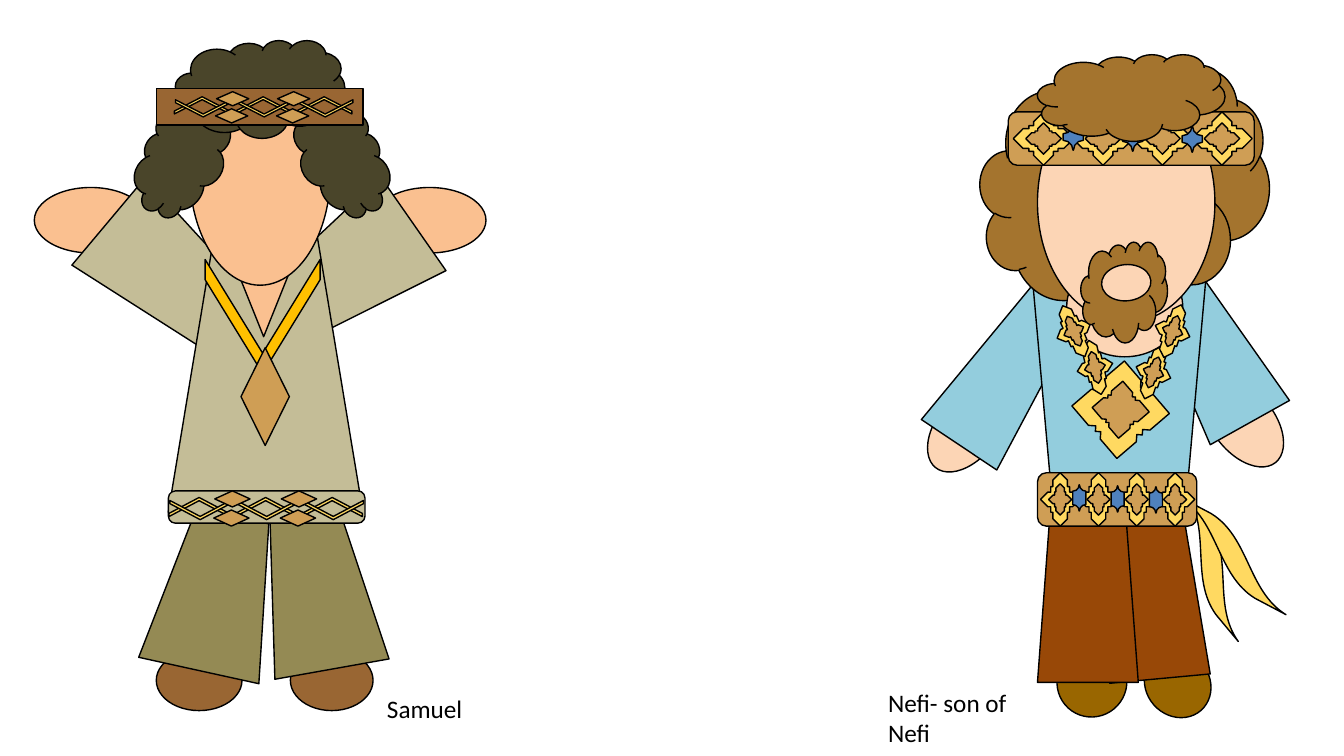
"""Draw two paper-doll figures, Samuel and Nefi, with their captions."""
from pptx import Presentation
from pptx import util as u
from pptx.dml import color
from pptx.enum import shapes, text

RGB = color.RGBColor
KIND = shapes.MSO_SHAPE
BLACK = RGB(0, 0, 0)
BROWN = RGB(0x99, 0x66, 0x33)
TAN = RGB(0xFA, 0xC0, 0x90)
LINEN = RGB(0xC4, 0xBD, 0x97)
OLIVE = RGB(0x94, 0x8A, 0x54)
AMBER = RGB(0xFF, 0xC0, 0x00)
DARK = RGB(0x4A, 0x45, 0x2A)
GOLD = RGB(0xFF, 0xD9, 0x61)
BRONZE = RGB(0xCF, 0x9E, 0x55)
SHOE = RGB(0x99, 0x66, 0x00)
RUST = RGB(0x98, 0x48, 0x07)
PEACH = RGB(0xFC, 0xD5, 0xB5)
SKY = RGB(0x93, 0xCD, 0xDD)
HAIR = RGB(0xA4, 0x74, 0x2E)
BLUE = RGB(0x4F, 0x81, 0xBD)


def put(doll, kind, fill, box, turn=0, adj=()):
    """Add one outlined shape to a doll."""
    part = doll.shapes.add_shape(kind, *map(u.Inches, box))
    part.shadow.inherit = False
    part.fill.solid()
    part.fill.fore_color.rgb = fill
    part.line.color.rgb = BLACK
    part.line.width = u.Pt(1)
    part.rotation = turn
    for i, value in enumerate(adj):
        part.adjustments[i] = value
    return part


def braid(doll, left, top, step, link, gem):
    """Add three crossed chevron pairs with four diamonds between them."""
    for i in range(3):
        for shift, turn in ((0, 270), (1, 90)):
            box = (left + i * step + shift * 0.01, top + shift * 0.03, *link)
            put(doll, KIND.CHEVRON, GOLD, box, turn, [0.833])
    for row in range(2):
        for i in range(2):
            x = left + (link[0] + step - gem[0]) / 2 + i * step - row * 0.01
            y = top + 0.14 + row * (gem[1] + 0.03)
            put(doll, KIND.DIAMOND, BRONZE, (x, y, *gem))


def star(doll, left, top, wide, high, turn=0):
    """Add a gold star with a smaller bronze star at its centre."""
    for fill, scale in ((GOLD, 1), (BRONZE, 0.585)):
        gap = (1 - scale) / 2
        box = (left + wide * gap, top + high * gap, wide * scale, high * scale)
        put(doll, KIND.QUAD_ARROW_CALLOUT, fill, box, turn,
            [0.37, 0.185, 0.185, 0.481])


def jewels(doll, band, left, step, wide, gem):
    """Add a bronze band with four stars and three blue gems."""
    put(doll, KIND.ROUNDED_RECTANGLE, BRONZE, band)
    top = band[1]
    for i in range(4):
        star(doll, left + i * step, top, wide, 0.53)
    for i in range(3):
        x = left + (wide + step - gem) / 2 + i * step
        put(doll, KIND.PLAQUE, BLUE, (x, top + 0.12 + i * 0.01, gem, 0.26),
            adj=[0.488])


def label(slide, words, box):
    """Add a caption."""
    note = slide.shapes.add_textbox(*map(u.Inches, box))
    frame = note.text_frame
    frame.word_wrap = True
    frame.auto_size = text.MSO_AUTO_SIZE.SHAPE_TO_FIT_TEXT
    frame.text = words
    font = frame.paragraphs[0].runs[0].font
    font.name = "Calibri"
    font.size = u.Pt(18)
    font.color.rgb = BLACK


def samuel(slide):
    """Draw Samuel with raised arms."""
    doll = slide.shapes.add_group_shape()
    flare = KIND.FLOWCHART_MANUAL_OPERATION
    for x, wide in ((1.55, 0.85), (2.88, 0.82)):
        put(doll, KIND.OVAL, BROWN, (x, 6.45, wide, 0.6))
    for x in (3.7, 0.34):
        put(doll, KIND.OVAL, TAN, (x, 1.86, 1.12, 0.65))
    put(doll, flare, LINEN, (1.17, 1.89, 1.13, 1.72), 310)
    put(doll, flare, LINEN, (2.9, 1.89, 1.13, 1.55), 55.1)
    put(doll, KIND.TRAPEZOID, LINEN, (1.67, 2.33, 1.93, 2.75), adj=[0.236])
    put(doll, flare, OLIVE, (1.53, 5.1, 1.22, 1.57), 192.4)
    put(doll, flare, OLIVE, (2.58, 5.08, 1.15, 1.57), 169.9)
    put(doll, KIND.CHEVRON, AMBER, (2.04, 2.57, 1.13, 1.14), 90, [0.822])
    put(doll, KIND.ISOSCELES_TRIANGLE, TAN, (2.13, 2.13, 0.97, 1.21), 180)
    put(doll, KIND.OVAL, TAN, (1.88, 0.56, 1.4, 2.27))
    put(doll, KIND.CLOUD, DARK, (1.17, 1.13, 1.32, 0.81), 302.9)
    curl = put(doll, KIND.CLOUD, DARK, (2.71, 1.13, 1.32, 0.81), 57.1)
    curl.element.spPr.xfrm.set("flipH", "1")
    put(doll, KIND.CLOUD, DARK, (1.74, 0.4, 1.68, 0.97))
    put(doll, KIND.ROUNDED_RECTANGLE, LINEN, (1.67, 4.87, 1.95, 0.32),
        adj=[0.218])
    put(doll, KIND.RECTANGLE, BROWN, (1.55, 0.88, 2.05, 0.36))
    braid(doll, 1.92, 0.77, 0.605, (0.17, 0.55), (0.32, 0.14))
    braid(doll, 1.88, 4.73, 0.66, (0.19, 0.6), (0.35, 0.16))
    put(doll, KIND.DIAMOND, BRONZE, (2.39, 3.45, 0.48, 0.97))


def nefi(slide):
    """Draw Nefi with beard, sash and jewels."""
    doll = slide.shapes.add_group_shape()
    put(doll, KIND.OVAL, SHOE, (11.33, 6.47, 0.7, 0.63), 48.7)
    put(doll, KIND.OVAL, SHOE, (10.48, 6.42, 0.7, 0.69), 304.9)
    for x, y, turn in ((11.24, 5.5, 256), (11.45, 5.39, 233.5)):
        put(doll, KIND.WAVE, GOLD, (x, y, 1.56, 0.25), turn, [0.2, -0.1])
    put(doll, KIND.TRAPEZOID, RUST, (10.85, 3.37, 1, 3.37), 354.7)
    put(doll, KIND.TRAPEZOID, RUST, (10.29, 3.4, 1, 3.37))
    put(doll, KIND.OVAL, PEACH, (9.09, 3.94, 1.01, 0.61), 308.7)
    put(doll, KIND.OVAL, PEACH, (11.83, 3.89, 1.01, 0.61), 51.3)
    put(doll, KIND.TRAPEZOID, SKY, (9.68, 2.38, 0.9, 2.22), 33.8)
    put(doll, KIND.TRAPEZOID, SKY, (11.42, 2.17, 0.9, 2.16), 330.8)
    put(doll, KIND.TRAPEZOID, SKY, (10.22, 2.54, 1.76, 2.58), 180, [0.13])
    put(doll, KIND.CLOUD, HAIR, (9.72, 0.68, 2.87, 2.44))
    put(doll, KIND.OVAL, PEACH, (10.58, 2.54, 1.15, 1))
    put(doll, KIND.OVAL, PEACH, (10.29, 0.82, 1.76, 2.38))
    jewels(doll, (10.29, 4.69, 1.58, 0.53), 10.32, 0.38, 0.39, 0.13)
    jewels(doll, (10, 1.11, 2.44, 0.53), 10.05, 0.59, 0.6, 0.2)
    put(doll, KIND.CLOUD, HAIR, (10.29, 0.54, 1.86, 0.86))
    star(doll, 10.63, 3.58, 0.97, 0.97, 4.4)
    for x, y, turn in ((10.68, 3.37, 347.1), (11.26, 3.42, 18.3),
                       (11.45, 3.01, 18.3), (10.47, 3.01, 336.4)):
        star(doll, x, y, 0.36, 0.55, turn)
    put(doll, KIND.CLOUD, HAIR, (10.72, 2.4, 0.86, 1))
    put(doll, KIND.OVAL, PEACH, (10.99, 2.56, 0.36, 0.49), 85.2)


def main():
    """Build and save the slide."""
    deck = Presentation()
    deck.slide_width = u.Inches(13.33)
    deck.slide_height = u.Inches(7.5)
    slide = deck.slides.add_slide(deck.slide_layouts[6])
    samuel(slide)
    nefi(slide)
    label(slide, "Samuel", (3.74, 6.83, 1, 0.4))
    label(slide, "Nefi- son of Nefi", (8.71, 6.77, 1.66, 0.71))
    deck.save("out.pptx")


if __name__ == "__main__":
    main()
